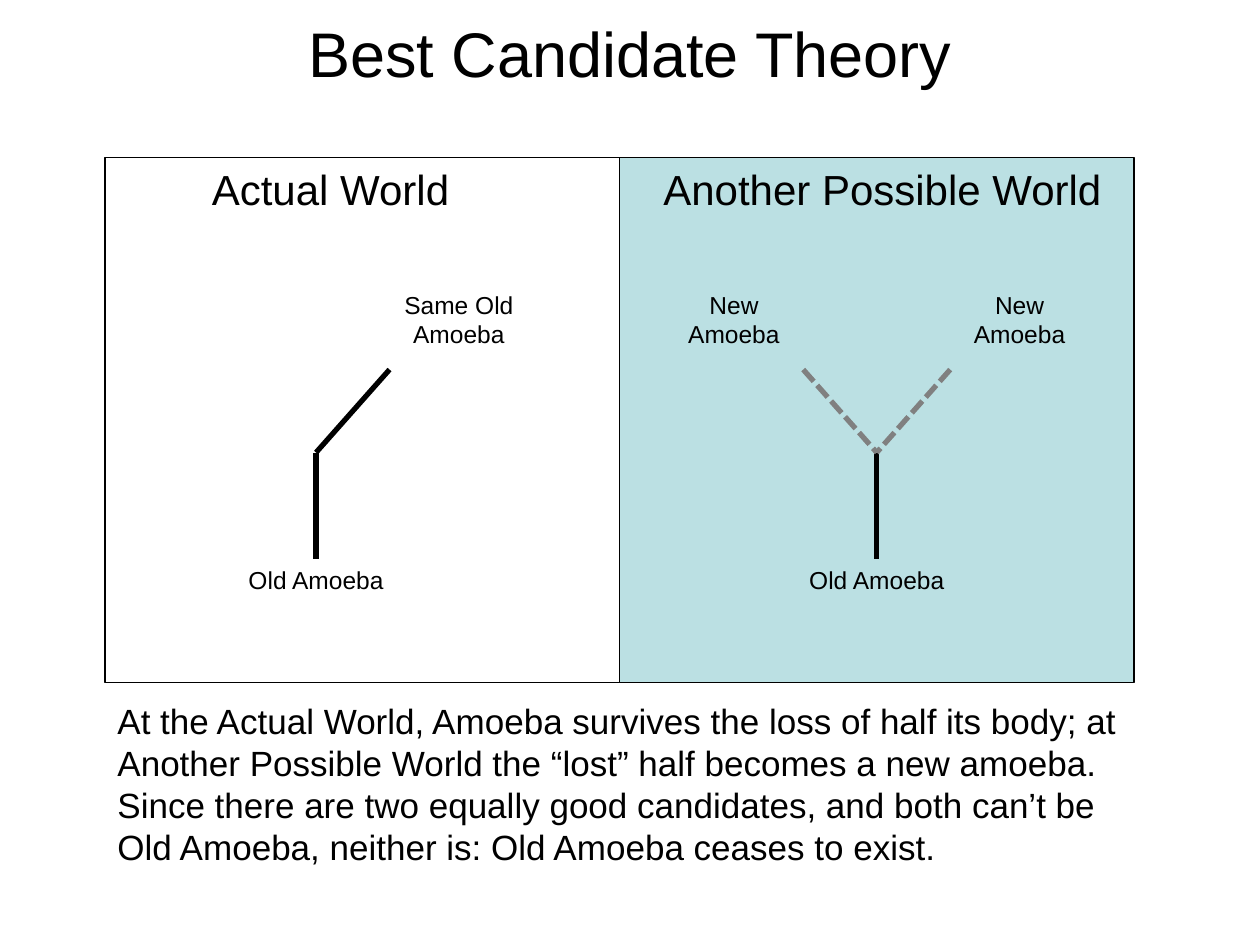
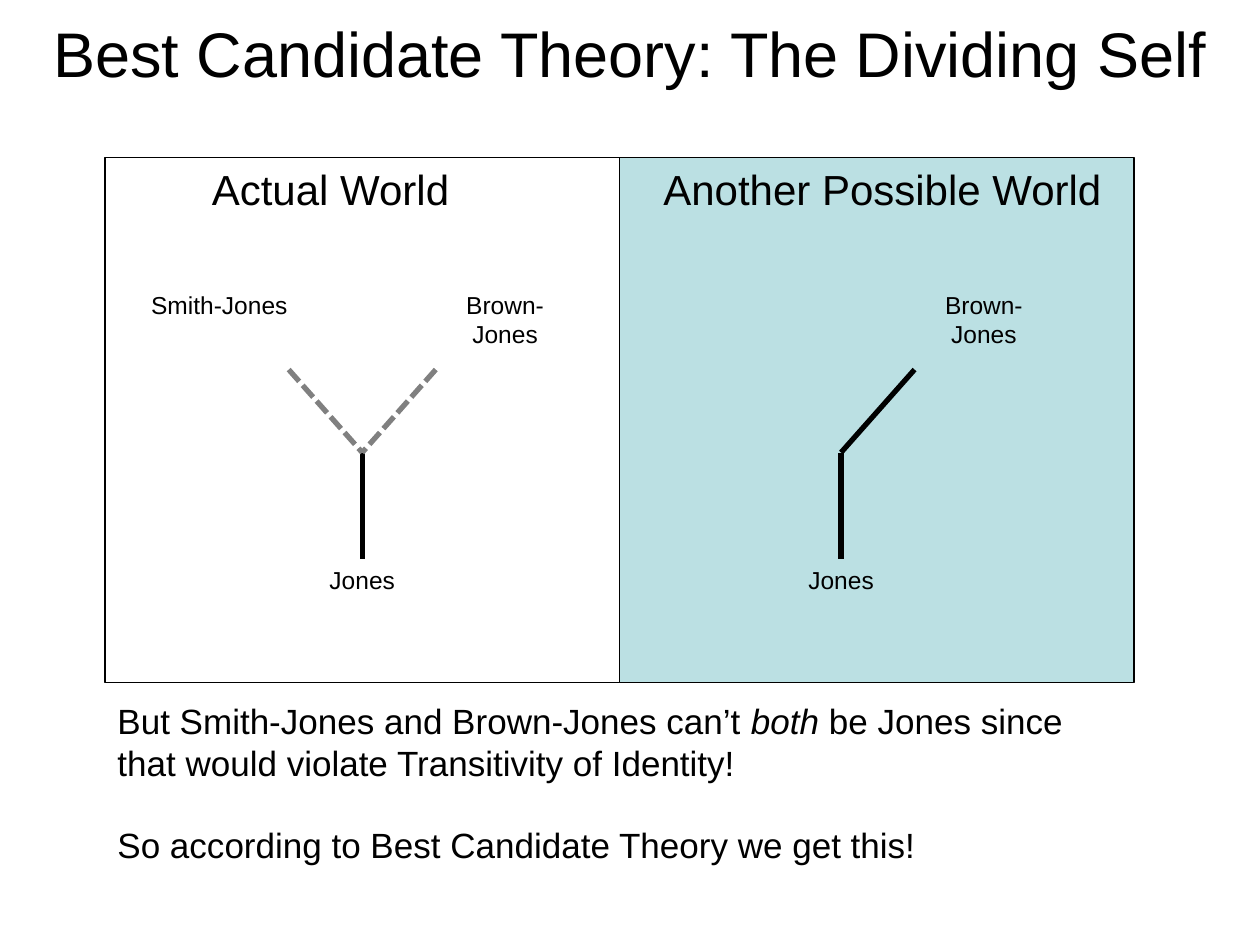
"""Build two slides comparing the actual world with another possible world."""
from lxml.etree import SubElement
from pptx import Presentation
from pptx.dml.color import RGBColor
from pptx.enum.dml import MSO_LINE
from pptx.enum.shapes import MSO_CONNECTOR, MSO_SHAPE
from pptx.enum.text import MSO_ANCHOR, MSO_AUTO_SIZE, PP_ALIGN
from pptx.oxml.ns import qn
from pptx.util import Inches, Pt

COLORS = {"ink": "000000", "faded": "808080", "panel": "BBE0E3"}
FONT = "Arial"

presentation = Presentation()
presentation.slide_width = Inches(10)
presentation.slide_height = Inches(7.5)
COLUMN = presentation.slide_width / 12
ROW = presentation.slide_height / 9

PANEL_LEFT, PANEL_TOP, PANEL_WIDTH, PANEL_HEIGHT = 1, 1.5, 4.9, 5
LABEL_WIDTH, LABEL_REACH, LABEL_ROW = 1.6, 1.36, 2.7
BRANCH_REACH, BRANCH_ROW, FORK_ROW, ROOT_ROW = 0.7, 3.52, 4.31, 5.32
HEADINGS = [("Actual World", 1.9, 2.5), ("Another Possible World", 6.2, 4.42)]


def add_text(shapes, box, paragraphs, size, align=PP_ALIGN.LEFT, wrap=True, grow=True):
    """Add a text box on the grid; each paragraph is a list of (text, italic) runs."""
    left, top, width, height = box
    shape = shapes.add_textbox(int(left * COLUMN), int(top * ROW), int(width * COLUMN), int(height * ROW))
    frame = shape.text_frame
    frame.word_wrap = wrap
    frame.auto_size = MSO_AUTO_SIZE.SHAPE_TO_FIT_TEXT if grow else MSO_AUTO_SIZE.NONE
    frame.vertical_anchor = MSO_ANCHOR.TOP if grow else MSO_ANCHOR.MIDDLE
    for index, runs in enumerate(paragraphs):
        paragraph = frame.add_paragraph() if index else frame.paragraphs[0]
        paragraph.alignment = align
        if index:
            paragraph.space_before = Pt(size * 1.15)
        for text, italic in runs:
            run = paragraph.add_run()
            run.text = text
            run.font.name = FONT
            run.font.size = Pt(size)
            run.font.italic = italic
            run.font.color.rgb = RGBColor.from_string(COLORS["ink"])


def add_branch(shapes, start, end, dashed=False):
    """Connect two grid points with a thick line."""
    connector = shapes.add_connector(
        MSO_CONNECTOR.STRAIGHT,
        int(start[0] * COLUMN), int(start[1] * ROW), int(end[0] * COLUMN), int(end[1] * ROW),
    )
    connector.line.width = Pt(3)
    connector.line.color.rgb = RGBColor.from_string(COLORS["faded" if dashed else "ink"])
    if dashed:
        connector.line.dash_style = MSO_LINE.SQUARE_DOT
    SubElement(connector._element.spPr, qn("a:effectLst"))


SLIDES = [
    {
        "title": "Best Candidate Theory",
        "trees": [
            {"stem": 3.01, "root": "Old Amoeba", "tips": {1: "Same Old Amoeba"}},
            {"stem": 8.35, "root": "Old Amoeba", "tips": {-1: "New Amoeba", 1: "New Amoeba"}},
        ],
        "comment": [[(
            "At the Actual World, Amoeba survives the loss of half its body; at Another "
            "Possible World the “lost” half becomes a new amoeba. Since there are two "
            "equally good candidates, and both can’t be Old Amoeba, neither is: Old "
            "Amoeba ceases to exist.", False)]],
    },
    {
        "title": "Best Candidate Theory: The Dividing Self",
        "trees": [
            {"stem": 3.45, "root": "Jones", "tips": {-1: "Smith-Jones", 1: "Brown-Jones"}},
            {"stem": 8.01, "root": "Jones", "tips": {1: "Brown-Jones"}},
        ],
        "comment": [
            [("But Smith-Jones and Brown-Jones can’t ", False), ("both", True),
             (" be Jones since that would violate Transitivity of Identity!", False)],
            [("So according to Best Candidate Theory we get this!", False)],
        ],
    },
]

for content in SLIDES:
    slide = presentation.slides.add_slide(presentation.slide_layouts[6])

    for index in range(2):
        panel = slide.shapes.add_shape(
            MSO_SHAPE.RECTANGLE,
            int((PANEL_LEFT + index * PANEL_WIDTH) * COLUMN), int(PANEL_TOP * ROW),
            int(PANEL_WIDTH * COLUMN), int(PANEL_HEIGHT * ROW),
        )
        panel.shadow.inherit = False
        panel.line.color.rgb = RGBColor.from_string(COLORS["ink"])
        panel.line.width = Pt(0.75)
        if index:
            panel.fill.solid()
            panel.fill.fore_color.rgb = RGBColor.from_string(COLORS["panel"])
        else:
            panel.fill.background()

    add_text(slide.shapes, (0, 0, 12, 1), [[(content["title"], False)]], 36, PP_ALIGN.CENTER, grow=False)
    for heading, left, width in HEADINGS:
        add_text(slide.shapes, (left, PANEL_TOP, width, 0.6), [[(heading, False)]], 24, wrap=False)
    add_text(slide.shapes, (PANEL_LEFT, 6.6, 2 * PANEL_WIDTH, 1.74), content["comment"], 20)

    for tree in content["trees"]:
        shapes = slide.shapes.add_group_shape().shapes
        stem = tree["stem"]
        add_branch(shapes, (stem, FORK_ROW), (stem, ROOT_ROW))
        labels = [(stem, ROOT_ROW, tree["root"])]
        for side, tip in tree["tips"].items():
            add_branch(shapes, (stem + side * BRANCH_REACH, BRANCH_ROW), (stem, FORK_ROW), len(tree["tips"]) > 1)
            labels.append((stem + side * LABEL_REACH, LABEL_ROW, tip))
        for center, top, label in labels:
            box = (center - LABEL_WIDTH / 2, top, LABEL_WIDTH, 0.4)
            add_text(shapes, box, [[(label, False)]], 14, PP_ALIGN.CENTER)

presentation.save("out.pptx")
